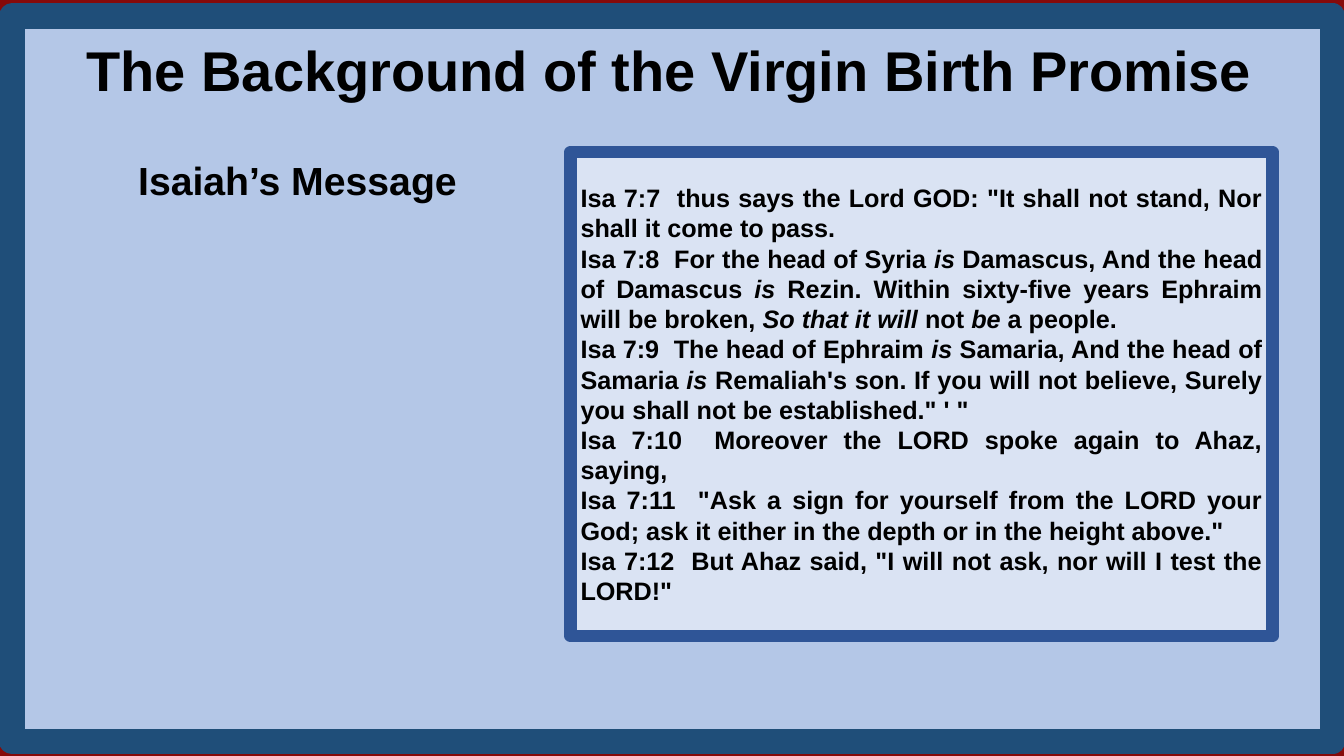
from pptx import Presentation
from pptx.dml.color import RGBColor
from pptx.enum.shapes import MSO_SHAPE as Shape
from pptx.enum.text import MSO_ANCHOR as Anchor, PP_ALIGN as Align
from pptx.util import Inches, Pt

MAROON = RGBColor(0x86, 0x0A, 0x0A)
NAVY = RGBColor(0x1F, 0x4E, 0x79)
BLUE = RGBColor(0x2F, 0x55, 0x97)
SKY = RGBColor(0xB4, 0xC7, 0xE7)
PALE = RGBColor(0xDA, 0xE3, 0xF3)
BLACK = RGBColor(0, 0, 0)
FONT = "Arial"

# Verses of Isaiah 7 by number; words between asterisks are italic
VERSES = {
    7: 'thus says the Lord GOD: "It shall not stand, Nor shall it come to pass.',
    8: "For the head of Syria *is* Damascus, And the head of Damascus *is *Rezin. "
       "Within sixty-five years Ephraim will be broken, *So that it will* not *be* a people.",
    9: "The head of Ephraim *is* Samaria, And the head of Samaria *is *Remaliah's son. "
       "If you will not believe, Surely you shall not be established.\" ' \"",
    10: "Moreover the LORD spoke again to Ahaz, saying,",
    11: '"Ask a sign for yourself from the LORD your God; '
        'ask it either in the depth or in the height above."',
    12: 'But Ahaz said, "I will not ask, nor will I test the LORD!"',
}


def add_run(para, text, size, italic=False):
    run = para.add_run()
    run.text = text
    font = run.font
    font.name, font.size, font.bold, font.italic = FONT, Pt(size), True, italic
    font.color.rgb = BLACK


def add_panel(slide, box, fill, edge, width):
    panel = slide.shapes.add_shape(Shape.RECTANGLE, *map(Inches, box))
    panel.shadow.inherit = False
    panel.fill.solid()
    panel.fill.fore_color.rgb = fill
    panel.line.color.rgb = edge
    panel.line.width = Pt(width)
    return panel


def add_heading(slide, box, text, size, after=0):
    frame = slide.shapes.add_textbox(*map(Inches, box)).text_frame
    frame.word_wrap = True
    para = frame.paragraphs[0]
    para.alignment = Align.CENTER
    para.space_after = Pt(after)
    add_run(para, text, size)


def add_verses(slide, box):
    frame = add_panel(slide, box, PALE, BLUE, 9).text_frame
    frame.word_wrap = True
    frame.vertical_anchor = Anchor.MIDDLE
    for i, (num, verse) in enumerate(VERSES.items()):
        para = frame.add_paragraph() if i else frame.paragraphs[0]
        para.alignment = Align.JUSTIFY
        # The first space after the number does not break
        parts = f"Isa 7:{num}  {verse}".split("*")
        for j, part in enumerate(parts):
            add_run(para, part, 18, italic=j % 2 == 1)


def build_slide(deck):
    slide = deck.slides.add_slide(deck.slide_layouts[6])
    slide.background.fill.solid()
    slide.background.fill.fore_color.rgb = MAROON
    # Framed backdrop
    add_panel(slide, (0.12, 0.16, 13.1, 7.2), SKY, NAVY, 18)
    # Scripture on the right
    add_verses(slide, (5.66, 1.51, 6.96, 4.8))
    # Headings
    add_heading(slide, (0.32, 1.5, 5.26, 0.57), "Isaiah’s Message", 28)
    add_heading(slide, (0.26, 0.3, 12.75, 0.77),
                "The Background of the Virgin Birth Promise", 40, after=5)


def main():
    deck = Presentation()
    deck.slide_width, deck.slide_height = Inches(13.33), Inches(7.5)
    build_slide(deck)
    deck.save("out.pptx")


if __name__ == "__main__":
    main()
